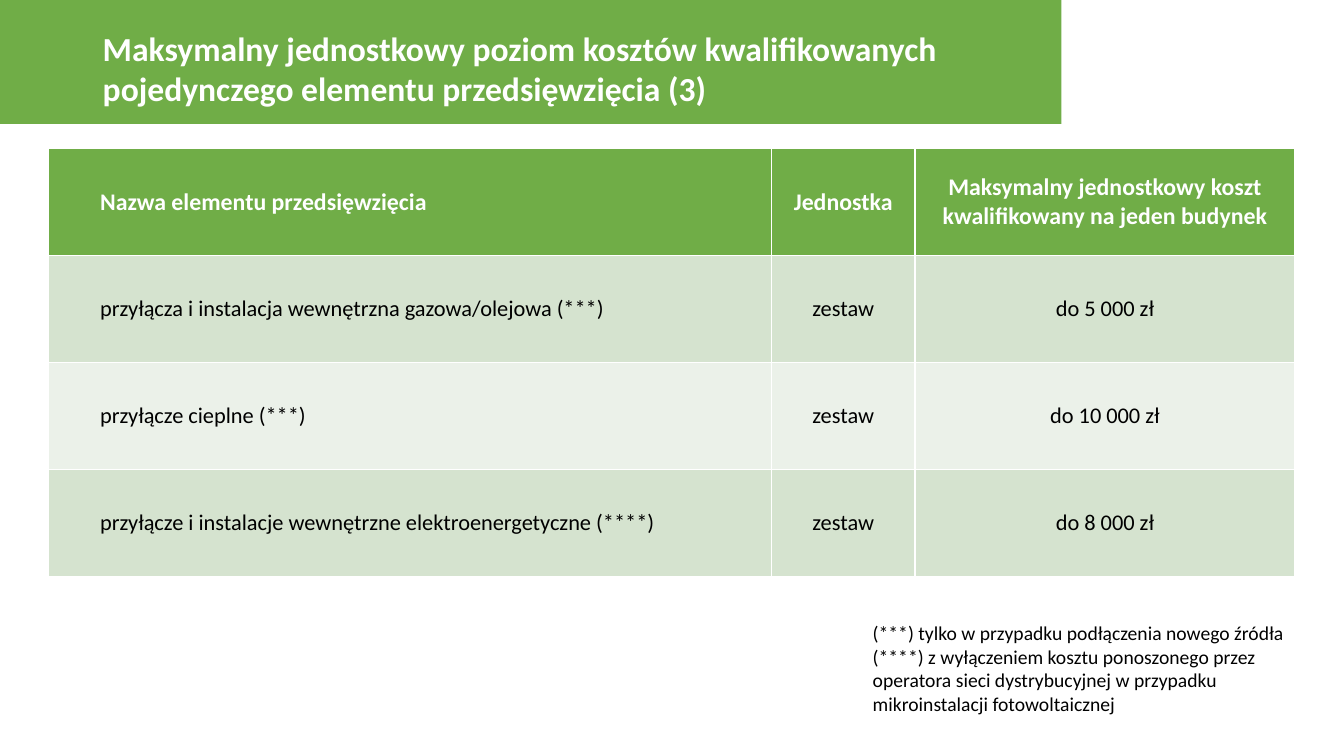
from pptx import Presentation
from pptx.dml.color import RGBColor
from pptx.enum.shapes import MSO_SHAPE as Shape
from pptx.enum.text import MSO_ANCHOR as Anchor, MSO_AUTO_SIZE as AutoSize, PP_ALIGN as Align
from pptx.util import Pt

GREEN = RGBColor(0x70, 0xAD, 0x47)
BAND_DARK = RGBColor(0xD5, 0xE3, 0xCF)
BAND_LIGHT = RGBColor(0xEB, 0xF1, 0xE9)
WHITE = RGBColor(0xFF, 0xFF, 0xFF)
BLACK = RGBColor(0, 0, 0)
FONT = "Calibri"

TITLE = "Maksymalny jednostkowy poziom kosztów kwalifikowanych pojedynczego elementu przedsięwzięcia (3)"
COST_ROWS = [
    ("Nazwa elementu przedsięwzięcia", "Jednostka",
     "Maksymalny jednostkowy koszt kwalifikowany na jeden budynek"),
    ("przyłącza i instalacja wewnętrzna gazowa/olejowa (***)", "zestaw", "do 5 000 zł"),
    ("przyłącze cieplne (***)", "zestaw", "do 10 000 zł"),
    ("przyłącze i instalacje wewnętrzne elektroenergetyczne (****)", "zestaw", "do 8 000 zł"),
]
COLUMN_SHARES = (0.58, 0.115, 0.305)
FOOTNOTES = [
    "(***) tylko w przypadku podłączenia nowego źródła",
    "(****) z wyłączeniem kosztu ponoszonego przez operatora sieci dystrybucyjnej "
    "w przypadku mikroinstalacji fotowoltaicznej",
]


def format_paragraph(paragraph, size, color, bold=False, align=Align.LEFT):
    paragraph.alignment = align
    font = paragraph.font
    font.name, font.size, font.bold = FONT, Pt(size), bold
    font.color.rgb = color


def add_header(slide, left, top, width, height):
    band = slide.shapes.add_shape(Shape.RECTANGLE, Pt(left), Pt(top), Pt(width), Pt(height))
    band.shadow.inherit = False
    band.fill.solid()
    band.fill.fore_color.rgb = GREEN
    band.line.fill.background()

    title = slide.shapes.title
    title.element.addprevious(band.element)
    title.left, title.top = Pt(left + 66.2), Pt(top + 15.1)
    title.width, title.height = Pt(width - 72), Pt(height - 21)
    frame = title.text_frame
    frame.text = TITLE
    frame.word_wrap = True
    frame.auto_size = AutoSize.NONE
    frame.vertical_anchor = Anchor.MIDDLE
    format_paragraph(frame.paragraphs[0], 24, WHITE, bold=True)


def format_cell(cell, text, row, column):
    is_header = row == 0
    cell.text = text
    cell.vertical_anchor = Anchor.MIDDLE
    cell.margin_left = cell.margin_right = cell.margin_top = Pt(0.7)
    cell.margin_bottom = Pt(0)
    cell.fill.solid()
    cell.fill.fore_color.rgb = GREEN if is_header else BAND_DARK if row % 2 else BAND_LIGHT
    paragraph = cell.text_frame.paragraphs[0]
    if column == 0:
        properties = paragraph._p.get_or_add_pPr()
        properties.set("marL", str(Pt(36)))
        properties.set("indent", "0")
        paragraph.level = 1
    format_paragraph(paragraph, 17 if is_header else 16, WHITE if is_header else BLACK,
                     is_header, Align.LEFT if column == 0 else Align.CENTER)


def add_cost_table(slide, left, top, width, height):
    table = slide.shapes.add_table(len(COST_ROWS), len(COLUMN_SHARES),
                                   Pt(left), Pt(top), Pt(width), Pt(height)).table
    for column, share in zip(table.columns, COLUMN_SHARES):
        column.width = Pt(width * share)
    for row, texts in enumerate(COST_ROWS):
        table.rows[row].height = Pt(height / len(COST_ROWS))
        for column, text in enumerate(texts):
            format_cell(table.cell(row, column), text, row, column)


def add_footnotes(slide, left, top, width, height):
    frame = slide.shapes.add_textbox(Pt(left), Pt(top), Pt(width), Pt(height)).text_frame
    frame.word_wrap = True
    frame.auto_size = AutoSize.SHAPE_TO_FIT_TEXT
    frame.text = "\n".join(FOOTNOTES)
    for paragraph in frame.paragraphs:
        format_paragraph(paragraph, 14, BLACK)


def main():
    presentation = Presentation()
    presentation.slide_width, presentation.slide_height = Pt(960), Pt(540)
    slide = presentation.slides.add_slide(presentation.slide_layouts[5])
    add_header(slide, 0, 0, 758.2, 88.5)
    add_cost_table(slide, 34.8, 105.8, 890.3, 306)
    add_footnotes(slide, 616.3, 440, 323.3, 75)
    presentation.save("out.pptx")


if __name__ == "__main__":
    main()
